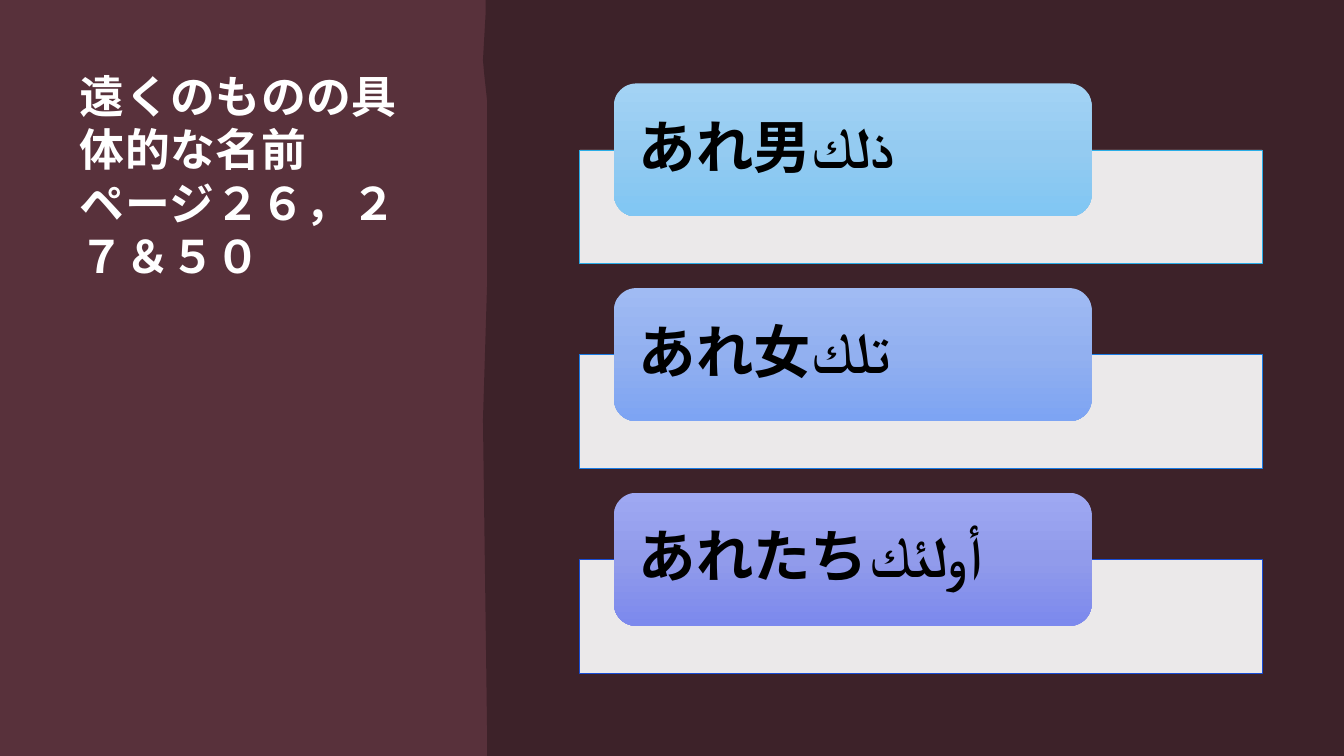
from copy import deepcopy
from dataclasses import dataclass

from lxml.etree import SubElement
from pptx import Presentation
from pptx.dml.color import RGBColor
from pptx.enum.shapes import MSO_SHAPE as SHAPE
from pptx.enum.text import MSO_ANCHOR as ANCHOR, MSO_AUTO_SIZE as AUTO, PP_ALIGN as ALIGN
from pptx.oxml.ns import qn
from pptx.util import Pt


@dataclass(frozen=True)
class Theme:
    dark: str = "3D2229"
    wine: str = "58313B"
    white: str = "FFFFFF"
    black: str = "000000"
    title_font: str = "Comic Neue"
    card_font: str = "Roboto"
    title_size: int = 32
    card_size: int = 41


THEME = Theme()
WIDTH, HEIGHT = 960, 540

# Wording, bar outline, and card gradient from top to bottom
CARDS = [
    ("あれ男ذلك", "29ADE7", ("A3D3F4", "94CBF1", "80C6F3")),
    ("あれ女تلك", "197CE5", ("A0BBF3", "92B0F0", "7DA4F3")),
    ("あれたちأولئك", "174CD5", ("9EA8F2", "919BEB", "7C89ED")),
]


def rgb(code):
    return RGBColor.from_string(code)


def paint(sp, color):
    sp.shadow.inherit = False
    sp.fill.solid()
    sp.fill.fore_color.rgb = rgb(color)
    sp.line.fill.background()


def add_box(s, kind, box):
    return s.shapes.add_shape(kind, *map(Pt, box))


def set_text(sp, text, font, size, color, anchor, inset=0):
    tf = sp.text_frame
    tf.word_wrap = True
    tf.auto_size = AUTO.NONE
    tf.vertical_anchor = anchor
    tf.margin_left = tf.margin_right = Pt(inset)
    tf.margin_top = tf.margin_bottom = 0
    p = tf.paragraphs[0]
    p.text = text
    p.alignment = ALIGN.LEFT
    p.font.name, p.font.size, p.font.bold = font, Pt(size), True
    p.font.color.rgb = rgb(color)
    return p


def fill_gradient(sp, colors):
    sp.fill.gradient()
    sp.fill.gradient_angle = 270
    gs_list = sp._element.spPr.find(qn("a:gradFill")).find(qn("a:gsLst"))
    gs_list.append(deepcopy(gs_list[0]))
    for i, (stop, color) in enumerate(zip(sp.fill.gradient_stops, colors)):
        stop.color.rgb = rgb(color)
        stop.position = i / (len(colors) - 1)


def add_backdrop(s, box):
    x, y, w, h = box
    # Wine panel, behind the title
    panel = add_box(s, SHAPE.RECTANGLE, box)
    paint(panel, THEME.wine)
    s.shapes._spTree.insert(2, panel._element)

    # Dark area with an uneven left edge
    edge = [(348.5, 540), (348.5, 525), (345, 300), (348.5, 202), (348.5, 118),
            (348.2, 85), (347.5, 72), (345.5, 54), (345, 43), (347, 8), (347, 0)]
    points = [(x + w, y), (x + w, y + h)] + [(x + dx, y + dy) for dx, dy in edge]
    builder = s.shapes.build_freeform(*points[0], scale=Pt(1))
    builder.add_line_segments(points[1:], close=True)
    paint(builder.convert_to_shape(), THEME.dark)


def add_title(s, box):
    title = s.shapes.title
    title.left, title.top, title.width, title.height = map(Pt, box)
    p = set_text(title, "遠くのものの具体的な名前\vページ２６，２７＆５０",
                 THEME.title_font, THEME.title_size, THEME.white, ANCHOR.TOP)
    p.line_spacing = Pt(38.2)
    p.font._element.set("spc", "40")


def add_card(s, box, text, outline, colors):
    x, y, w, h = box
    # Translucent bar
    bar = add_box(s, SHAPE.RECTANGLE, (x, y + 47.5, w, h - 47.5))
    paint(bar, THEME.white)
    SubElement(bar.fill._xPr.find(qn("a:solidFill"))[0], qn("a:alpha"), val="90000")
    bar.line.color.rgb = rgb(outline)
    bar.line.width = Pt(0.5)

    # Rounded label, 70 % of the bar's width
    label = add_box(s, SHAPE.ROUNDED_RECTANGLE, (x + 24.4, y, w * 0.7, 95))
    paint(label, colors[0])
    fill_gradient(label, colors)
    p = set_text(label, text, THEME.card_font, THEME.card_size, THEME.black,
                 ANCHOR.MIDDLE, inset=13)
    p.line_spacing = 0.9


def add_card_list(s, box):
    x, y, w, h = box
    gap = 17.3
    card_h = (h - gap * (len(CARDS) - 1)) / len(CARDS)
    for i, card in enumerate(CARDS):
        add_card(s, (x, y + i * (card_h + gap), w, card_h), *card)


def main():
    prs = Presentation()
    prs.slide_width, prs.slide_height = Pt(WIDTH), Pt(HEIGHT)
    s = prs.slides.add_slide(prs.slide_layouts[5])
    s.background.fill.solid()
    s.background.fill.fore_color.rgb = rgb(THEME.dark)
    add_backdrop(s, (0, 0, WIDTH, HEIGHT))
    add_title(s, (57, 49, 245, 434))
    add_card_list(s, (414.2, 59.6, 487.4, 421.3))
    prs.save("out.pptx")


if __name__ == "__main__":
    main()
